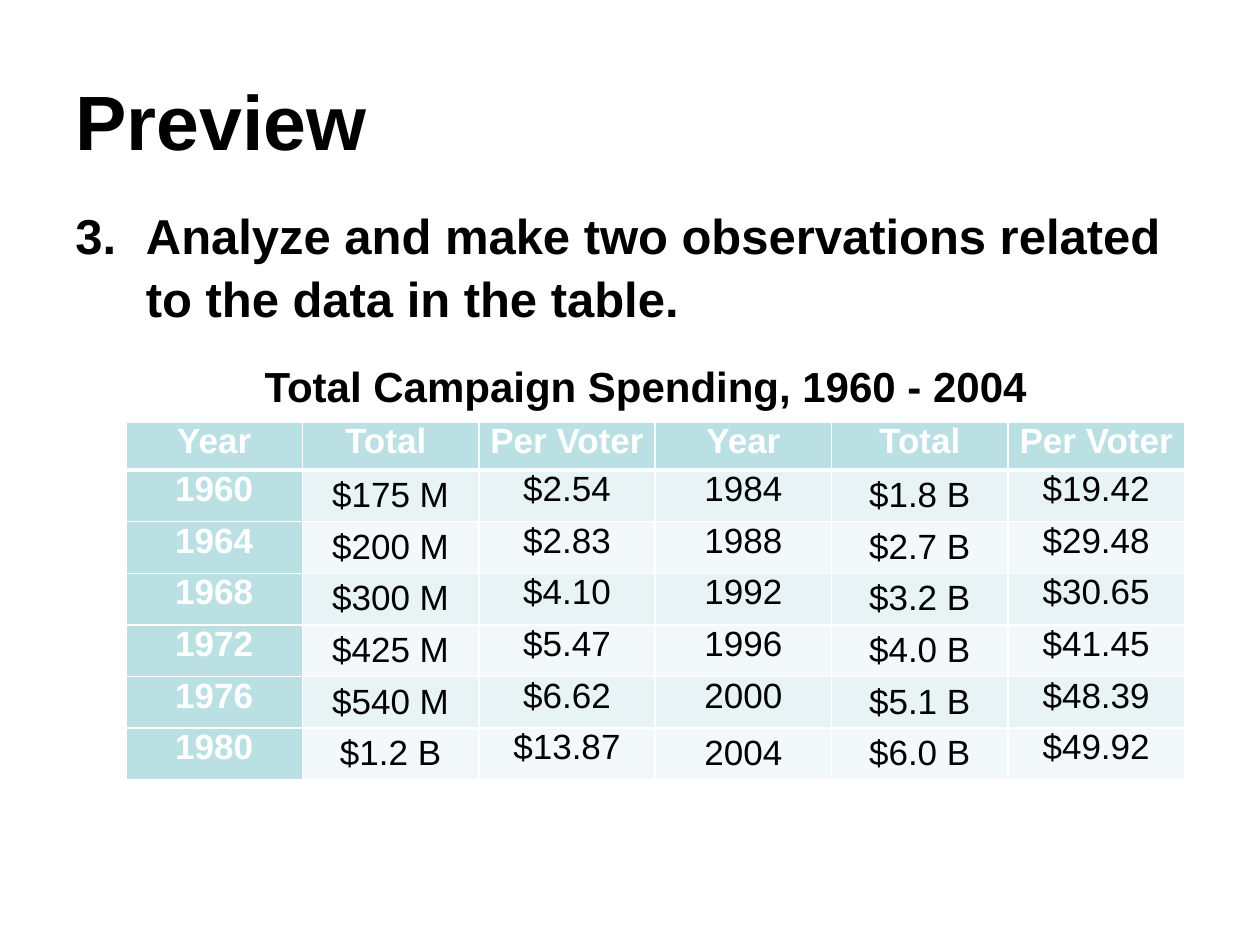
from lxml import etree
from pptx import Presentation
from pptx import util as u
from pptx.dml.color import RGBColor
from pptx.enum import text
from pptx.oxml.ns import qn

HEADINGS = ["Year", "Total ", "Per Voter", "Year", "Total", "Per Voter"]
SPENDING = [
    ["1960", "$175 M", "$2.54", "1984", "$1.8 B", "$19.42"],
    ["1964", "$200 M", "$2.83", "1988", "$2.7 B", "$29.48"],
    ["1968", "$300 M", "$4.10", "1992", "$3.2 B", "$30.65"],
    ["1972", "$425 M", "$5.47", "1996", "$4.0 B", "$41.45"],
    ["1976", "$540 M", "$6.62", "2000", "$5.1 B", "$48.39"],
    ["1980", "$1.2 B", "$13.87", "2004", "$6.0 B", "$49.92"],
]
COLORS = {"ink": "000000", "paper": "FFFFFF", "accent": "BBE0E3",
          "odd": "E7F3F4", "even": "F3F9FA"}
LEFT, CENTER = text.PP_ALIGN.LEFT, text.PP_ALIGN.CENTER
TOP, MIDDLE = text.MSO_ANCHOR.TOP, text.MSO_ANCHOR.MIDDLE
TEXTS = [
    ("Preview", (0.5, 0.3, 9, 1.25), 44, LEFT, MIDDLE, None),
    ("Analyze and make two observations related to the data in the table.",
     (0.5, 1.55, 9.25, 4.95), 28, LEFT, TOP, 3),
    ("Total Campaign Spending, 1960 - 2004", (1, 2.78, 8.25, 0.51), 24, CENTER, TOP, None),
]
COLUMN, HEAD_ROW, ROW = 1.4, 0.38, 0.41
LOOSE = 1.15


def apply(target, values):
    for name, value in values.items():
        setattr(target, name, value)


def write(paragraph, words, size, color, bold, align, spacing=None):
    apply(paragraph, {"alignment": align, "line_spacing": spacing})
    run = paragraph.add_run()
    run.text = words
    apply(run.font, {"name": "Arial", "size": u.Pt(size), "bold": bold})
    run.font.color.rgb = RGBColor.from_string(COLORS[color])


def number(paragraph, start):
    props = paragraph._p.get_or_add_pPr()
    props.set("marL", str(u.Inches(0.56)))
    props.set("indent", str(-u.Inches(0.56)))
    etree.SubElement(props, qn("a:buFont"), typeface="Arial")
    etree.SubElement(props, qn("a:buAutoNum"), type="arabicPeriod", startAt=str(start))


def border(cell, widths):
    props = cell._tc.get_or_add_tcPr()
    for position, (side, width) in enumerate(widths.items()):
        line = etree.Element(qn(f"a:ln{side}"), w=str(u.Pt(width)))
        fill = etree.SubElement(line, qn("a:solidFill"))
        etree.SubElement(fill, qn("a:srgbClr"), val=COLORS["paper"])
        props.insert(position, line)


def add_text(slide, words, place, size, align, anchor, start):
    frame = slide.shapes.add_textbox(*map(u.Inches, place)).text_frame
    apply(frame, {"word_wrap": True, "vertical_anchor": anchor})
    paragraph = frame.paragraphs[0]
    if start:
        number(paragraph, start)
    write(paragraph, words, size, "ink", True, align, 1.07)


def add_spending(slide):
    rows = [HEADINGS] + SPENDING
    width, height = COLUMN * len(HEADINGS), HEAD_ROW + ROW * len(SPENDING)
    table = slide.shapes.add_table(len(rows), len(HEADINGS), u.Inches(1), u.Inches(3.35),
                                   u.Inches(width), u.Inches(height)).table
    for column in table.columns:
        column.width = u.Inches(COLUMN)
    for r, values in enumerate(rows):
        table.rows[r].height = u.Inches(ROW if r else HEAD_ROW)
        for c, value in enumerate(values):
            cell = table.cell(r, c)
            heading = r == 0 or c == 0
            loose = r > 0 and (c in (1, 4) or value == "2004")
            shade = "accent" if heading else "odd" if r % 2 else "even"
            apply(cell, {"margin_left": u.Inches(0.07), "margin_right": u.Inches(0.07),
                         "margin_top": 0, "margin_bottom": 0})
            cell.fill.solid()
            cell.fill.fore_color.rgb = RGBColor.from_string(COLORS[shade])
            border(cell, {"L": 1, "R": 1, "T": 3 if r == 1 else 1, "B": 1 if r else 3})
            write(cell.text_frame.paragraphs[0], value, 20, "paper" if heading else "ink",
                  heading, CENTER, LOOSE if loose else None)


def main():
    deck = Presentation()
    apply(deck, {"slide_width": u.Inches(10), "slide_height": u.Inches(7.5)})
    slide = deck.slides.add_slide(deck.slide_layouts[6])
    title, task, caption = TEXTS
    add_text(slide, *title)
    add_text(slide, *task)
    add_spending(slide)
    add_text(slide, *caption)
    deck.save("out.pptx")


if __name__ == "__main__":
    main()
